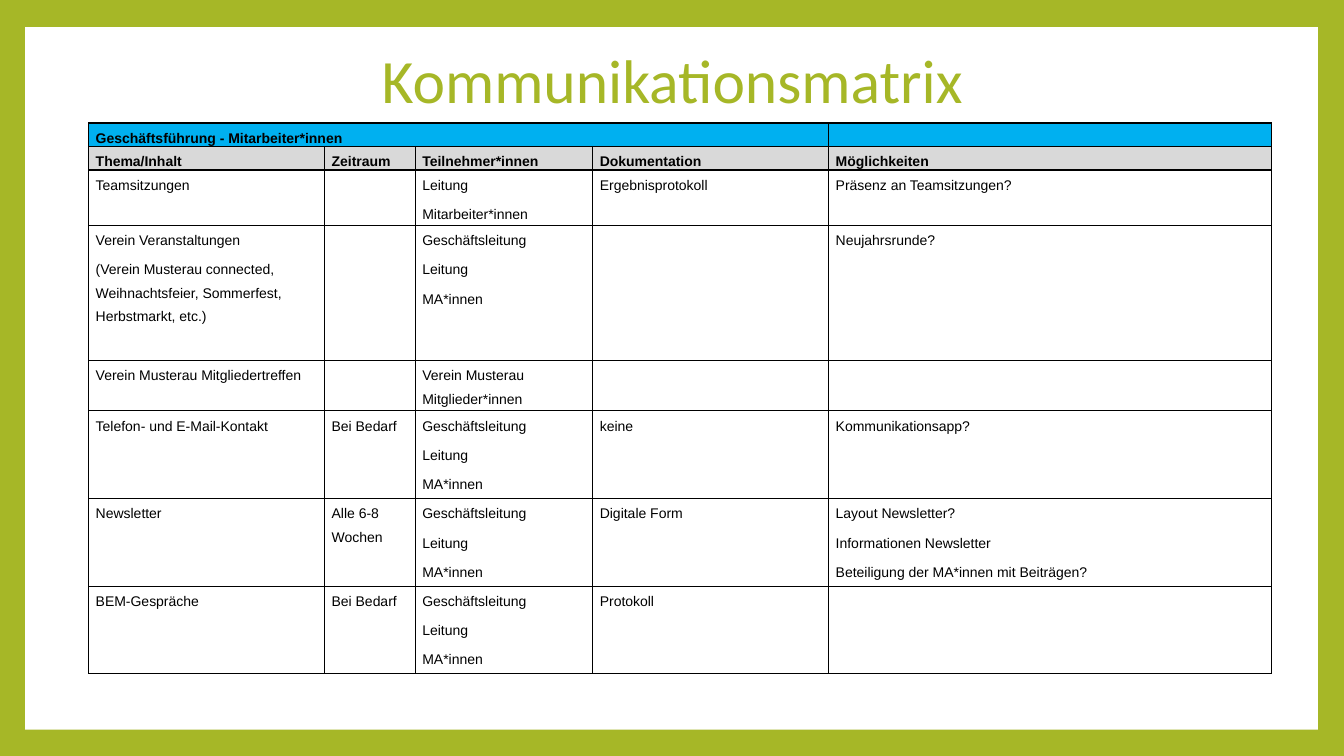
"""Build the communication matrix slide."""
import pptx
import pptx.dml.color
import pptx.enum.shapes
import pptx.enum.text
import pptx.oxml
import pptx.oxml.ns
import pptx.util
from pptx.util import Inches

COLORS = {"green": "A6B727", "white": "FFFFFF", "black": "000000",
          "blue": "00B0F0", "grey": "D9D9D9"}
COL_WIDTHS = [2.34, 0.9, 1.76, 2.34, 4.39]
ROW_HEIGHTS = [0.23, 0.23, 0.55, 1.34, 0.5, 0.87, 0.87, 0.87]
HEAD_FILLS = ["blue", "grey"]
TEAM = "Geschäftsleitung\nLeitung\nMA*innen"
ROWS = [
    ["Geschäftsführung - Mitarbeiter*innen", "", "", "", ""],
    ["Thema/Inhalt", "Zeitraum", "Teilnehmer*innen", "Dokumentation", "Möglichkeiten"],
    ["Teamsitzungen", "", "Leitung\nMitarbeiter*innen", "Ergebnisprotokoll",
     "Präsenz an Teamsitzungen?"],
    ["Verein Veranstaltungen\n(Verein Musterau connected, Weihnachtsfeier, Sommerfest, "
     "Herbstmarkt, etc.)", "", TEAM, "", "Neujahrsrunde?"],
    ["Verein Musterau Mitgliedertreffen", "", "Verein Musterau Mitglieder*innen", "", ""],
    ["Telefon- und E-Mail-Kontakt", "Bei Bedarf", TEAM, "keine", "Kommunikationsapp?"],
    ["Newsletter", "Alle 6-8 Wochen", TEAM, "Digitale Form",
     "Layout Newsletter?\nInformationen Newsletter\n"
     "Beteiligung der MA*innen mit Beiträgen?"],
    ["BEM-Gespräche", "Bei Bedarf", TEAM, "Protokoll", ""],
]


def rgb(name):
    """Return the named colour."""
    return pptx.dml.color.RGBColor.from_string(COLORS[name])


def add_run(p, text, font, size, color, bold=False):
    """Add one formatted run to a paragraph."""
    r = p.add_run()
    r.text = text
    r.font.name = font
    r.font.size = pptx.util.Pt(size)
    r.font.bold = bold
    r.font.color.rgb = rgb(color)


def add_panel(s):
    """Draw the white panel behind everything on the green background."""
    s.background.fill.solid()
    s.background.fill.fore_color.rgb = rgb("green")
    sp = s.shapes.add_shape(pptx.enum.shapes.MSO_SHAPE.RECTANGLE, Inches(0.25),
                            Inches(0.27), Inches(12.82), Inches(6.97))
    sp.shadow.inherit = False
    sp.fill.solid()
    sp.fill.fore_color.rgb = rgb("white")
    sp.line.fill.background()
    s.shapes._spTree.insert(2, sp._element)


def set_title(s, text):
    """Place and format the slide title."""
    sp = s.shapes.title
    sp.left, sp.top = Inches(1.27), Inches(0.44)
    sp.width, sp.height = Inches(10.8), Inches(0.78)
    tf = sp.text_frame
    tf.vertical_anchor = pptx.enum.text.MSO_ANCHOR.MIDDLE
    p = tf.paragraphs[0]
    p.alignment = pptx.enum.text.PP_ALIGN.CENTER
    p.line_spacing = 0.9
    add_run(p, text, "Calibri", 44, "green")


def set_borders(cell):
    """Give a cell thin black borders on all sides."""
    tc_pr = cell._tc.get_or_add_tcPr()
    for i, side in enumerate(["lnL", "lnR", "lnT", "lnB"]):
        tc_pr.insert(i, pptx.oxml.parse_xml(
            f'<a:{side} {pptx.oxml.ns.nsdecls("a")} w="12700"><a:solidFill>'
            f'<a:srgbClr val="{COLORS["black"]}"/></a:solidFill></a:{side}>'))


def fill_cell(cell, text, fill):
    """Write the lines of a cell and set its fill, margins and borders."""
    cell.margin_left = cell.margin_right = Inches(0.07)
    cell.margin_top = cell.margin_bottom = 0
    if fill:
        cell.fill.solid()
        cell.fill.fore_color.rgb = rgb(fill)
    else:
        cell.fill.background()
    set_borders(cell)
    tf = cell.text_frame
    if not text:
        tf.paragraphs[0]._p.append(pptx.oxml.parse_xml(
            f'<a:endParaRPr {pptx.oxml.ns.nsdecls("a")} sz="1000"/>'))
        return
    for i, line in enumerate(text.split("\n")):
        p = tf.add_paragraph() if i else tf.paragraphs[0]
        p.line_spacing = 1.5
        p.space_before = p.space_after = pptx.util.Pt(2)
        add_run(p, line, "Arial", 10, "black", bool(fill))


def add_matrix(s):
    """Add the communication table."""
    table = s.shapes.add_table(len(ROWS), len(COL_WIDTHS), Inches(0.88), Inches(1.22),
                               Inches(sum(COL_WIDTHS)), Inches(sum(ROW_HEIGHTS))).table
    table.first_row = table.horz_banding = False
    for col, width in zip(table.columns, COL_WIDTHS):
        col.width = Inches(width)
    for i, (height, texts) in enumerate(zip(ROW_HEIGHTS, ROWS)):
        table.rows[i].height = Inches(height)
        fill = HEAD_FILLS[i] if i < len(HEAD_FILLS) else None
        for j, text in enumerate(texts):
            fill_cell(table.cell(i, j), text, fill)
    table.cell(0, 0).merge(table.cell(0, 3))


def main():
    """Build and save the slide."""
    prs = pptx.Presentation()
    prs.slide_width, prs.slide_height = Inches(13.33), Inches(7.5)
    s = prs.slides.add_slide(prs.slide_layouts[5])
    add_panel(s)
    set_title(s, "Kommunikationsmatrix")
    add_matrix(s)
    prs.save("out.pptx")


if __name__ == "__main__":
    main()
